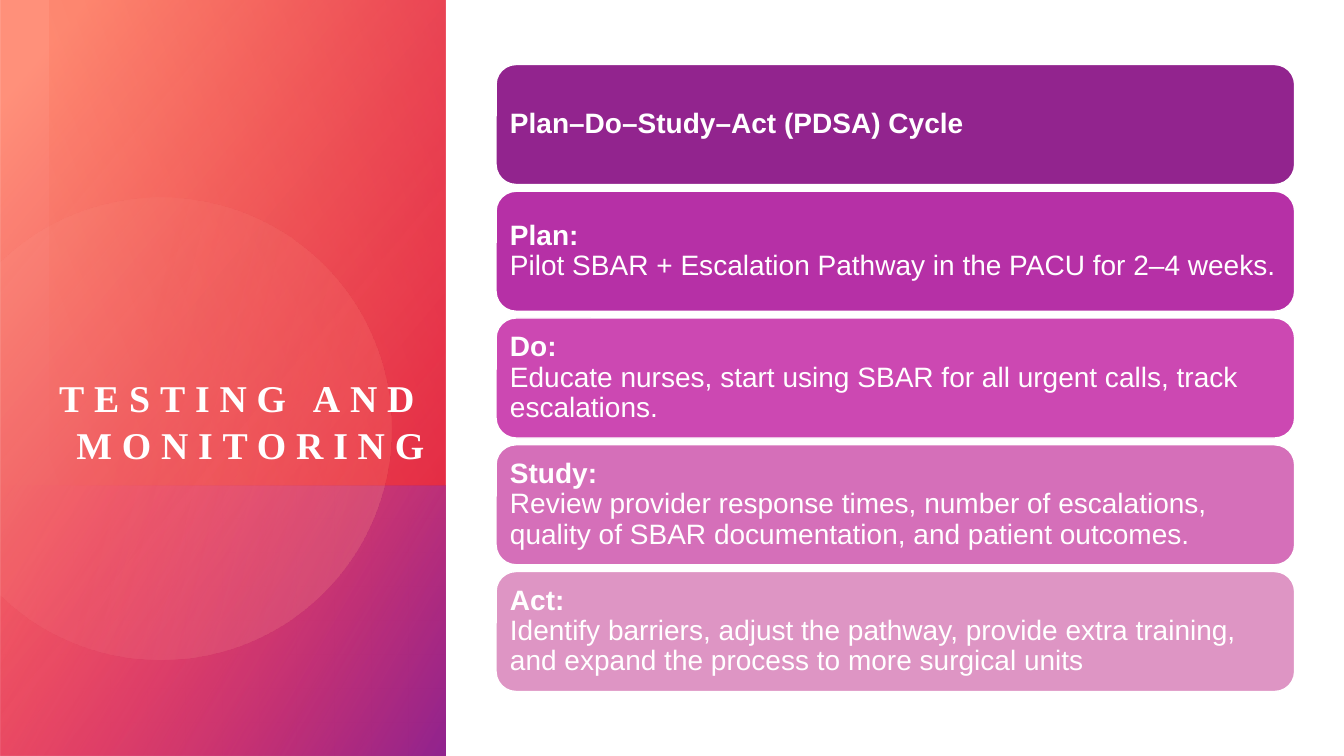
"""Builds the Testing and Monitoring slide with the five PDSA steps."""
from math import acos, cos, sin

from lxml.etree import SubElement
from pptx import Presentation
from pptx.dml.color import RGBColor
from pptx.enum.shapes import MSO_SHAPE as Shape
from pptx.enum.text import MSO_ANCHOR as Anchor, MSO_AUTO_SIZE as AutoSize, PP_ALIGN as Align
from pptx.oxml.ns import qn
from pptx.util import Inches, Pt

WHITE = RGBColor(0xFF, 0xFF, 0xFF)
SALMON = RGBColor(0xFF, 0x90, 0x7A)
PEACH = RGBColor(0xFF, 0xBC, 0xAF)
CRIMSON = RGBColor(0xDA, 0x00, 0x2F)
ORANGE = RGBColor(0xFE, 0x4A, 0x00)
PINK = RGBColor(0xFF, 0x50, 0x76)
PURPLE = RGBColor(0x92, 0x24, 0x8E)
VIOLET = RGBColor(0xB6, 0x30, 0xA6)
MAGENTA = RGBColor(0xCC, 0x48, 0xB2)
ORCHID = RGBColor(0xD5, 0x6F, 0xB9)
BLUSH = RGBColor(0xDE, 0x95, 0xC4)


def fill_gradient(shape, stops, angle):
    """Fill with (position, colour, opacity) stops at a clockwise angle."""
    shape.shadow.inherit = False
    shape.line.fill.background()
    shape.fill.gradient()
    shape.fill.gradient_angle = 360 - angle
    for stop, (position, colour, opacity) in zip(shape.fill.gradient_stops, stops):
        stop.position = position / 100
        stop.color.rgb = colour
    colours = shape._element.spPr.iter(qn("a:srgbClr"))
    for element, (position, colour, opacity) in zip(list(colours), stops):
        SubElement(element, qn("a:alpha")).set("val", str(opacity * 1000))


def add_panel(left, top, width, height, rotation, stops, angle):
    """Add a mirrored, turned gradient rectangle."""
    panel = page.shapes.add_shape(
        Shape.RECTANGLE, Inches(left), Inches(top), Inches(width), Inches(height))
    panel.rotation = rotation
    panel._element.spPr.find(qn("a:xfrm")).set("flipH", "1")
    fill_gradient(panel, stops, angle)


deck = Presentation()
deck.slide_width, deck.slide_height = Inches(13.33), Inches(7.5)
page = deck.slides.add_slide(deck.slide_layouts[5])
title = page.shapes.title

add_panel(-1.54, 1.54, 7.5, 4.42, 270, [(8, SALMON, 100), (100, CRIMSON, 89)], 50)
add_panel(0.86, 3.95, 2.69, 4.42, 270, [(0, PINK, 0), (99, PURPLE, 100)], 60)

center_x, center_y, radius = 1.59, 4.25, 2.29
edge = acos(-center_x / radius)
steps = 120
angles = [edge * (2 * step / steps - 1) for step in range(steps + 1)]
points = [(Inches(center_x + radius * cos(turn)), Inches(center_y + radius * sin(turn)))
          for turn in angles]
builder = page.shapes.build_freeform(*points[0])
builder.add_line_segments(points[1:], close=True)
fill_gradient(builder.convert_to_shape(), [(36, PEACH, 6), (100, SALMON, 26)], 14)

add_panel(0.05, 0.45, 4.81, 3.92, 90, [(0, CRIMSON, 29), (100, ORANGE, 0)], 110)

title.left, title.top, title.width, title.height = (
    Inches(0.5), Inches(0.95), Inches(3.71), Inches(3.68))
page.shapes._spTree.append(title._element)
frame = title.text_frame
frame.text = "TESTING AND MONITORING"
frame.word_wrap = True
frame.auto_size = AutoSize.NONE
frame.vertical_anchor = Anchor.BOTTOM
frame.margin_left = frame.margin_right = frame.margin_top = frame.margin_bottom = 0
para = frame.paragraphs[0]
para.alignment = Align.RIGHT
para.line_spacing = 1.03
span = para.runs[0]
span.font.name = "Times New Roman"
span.font.size = Pt(27)
span.font.bold = True
span.font.color.rgb = WHITE
span._r.get_or_add_rPr().set("spc", "700")

cycle = [
    (PURPLE, "Plan–Do–Study–Act (PDSA) Cycle"),
    (VIOLET, "Plan:\vPilot SBAR + Escalation Pathway in the PACU for 2–4 weeks."),
    (MAGENTA, "Do:\vEducate nurses, start using SBAR for all urgent calls, track escalations."),
    (ORCHID, "Study:\vReview provider response times, number of escalations, "
             "quality of SBAR documentation, and patient outcomes."),
    (BLUSH, "Act:\vIdentify barriers, adjust the pathway, provide extra training, "
            "and expand the process to more surgical units"),
]
for row, (colour, text) in enumerate(cycle):
    box = page.shapes.add_shape(
        Shape.ROUNDED_RECTANGLE, Inches(4.92), Inches(0.64 + 1.2575 * row),
        Inches(7.92), Inches(1.19))
    box.shadow.inherit = False
    box.fill.solid()
    box.fill.fore_color.rgb = colour
    box.line.color.rgb = WHITE
    box.line.width = Pt(1)
    frame = box.text_frame
    frame.word_wrap = True
    frame.vertical_anchor = Anchor.MIDDLE
    frame.margin_left = frame.margin_right = Inches(0.08)
    frame.margin_top = frame.margin_bottom = Inches(0.08)
    para = frame.paragraphs[0]
    para.text = text
    para.alignment = Align.LEFT
    para.line_spacing = 0.9
    for index, span in enumerate(para.runs):
        span.font.name = "Arial"
        span.font.size = Pt(20)
        span.font.bold = index == 0
        span.font.color.rgb = WHITE

deck.save("out.pptx")
